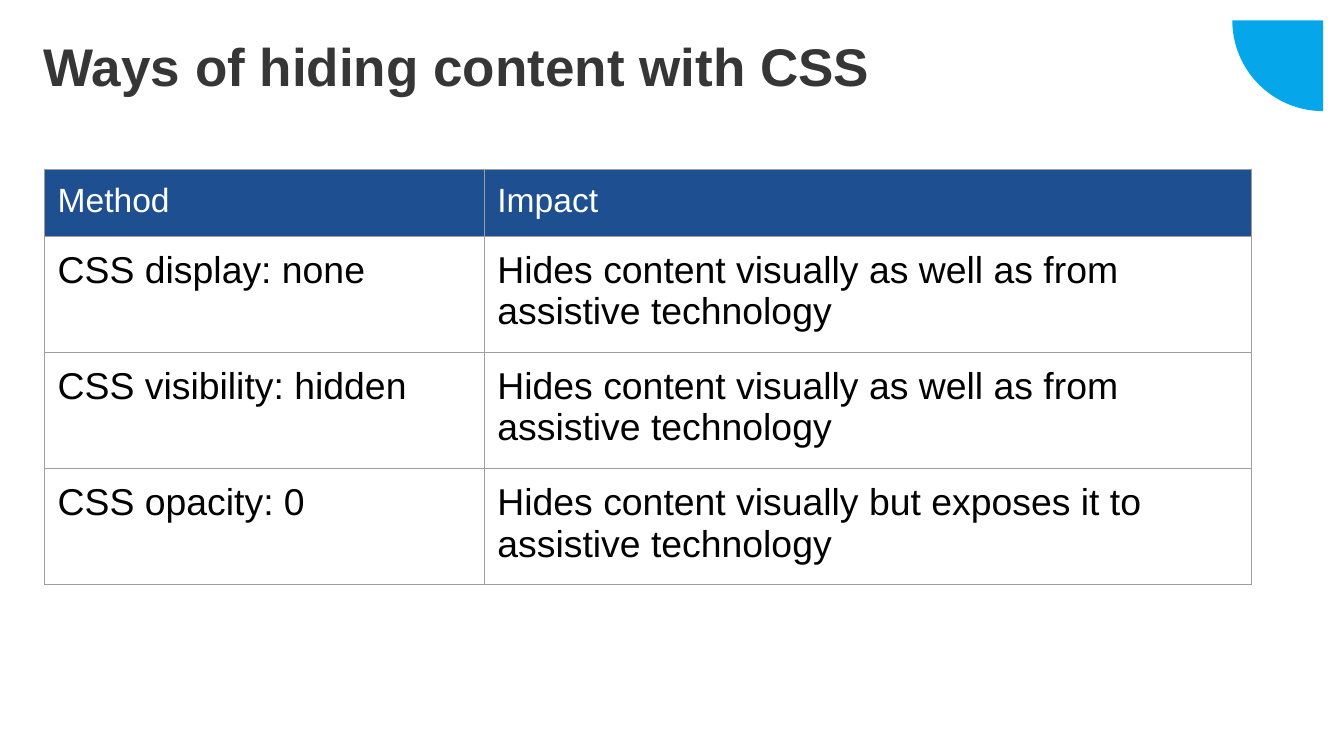
from lxml import etree
from pptx import Presentation
from pptx.dml.color import RGBColor
from pptx.enum.shapes import MSO_SHAPE
from pptx.enum.text import MSO_ANCHOR
from pptx.oxml.ns import qn
from pptx.util import Cm, Pt

PIE = MSO_SHAPE.PIE
MIDDLE = MSO_ANCHOR.MIDDLE
FONT = "Arial"
COLORS = {
    "accent": "06A6EA",
    "title": "373636",
    "header": "1D4F91",
    "header_text": "FFFFFF",
    "body_text": "000000",
    "border": "9E9E9E",
}
METHODS = [
    ("Method", "Impact"),
    ("CSS display: none", "Hides content visually as well as from assistive technology"),
    ("CSS visibility: hidden", "Hides content visually as well as from assistive technology"),
    ("CSS opacity: 0", "Hides content visually but exposes it to assistive technology"),
]


def rgb(name):
    """Return the named colour."""
    return RGBColor.from_string(COLORS[name])


def style_paragraph(paragraph, size, color, bold=False):
    """Set the font of a paragraph."""
    font = paragraph.font
    font.name, font.size, font.bold = FONT, Pt(size), bold
    font.color.rgb = rgb(color)


def add_corner(slide, left, top, size):
    """Add the quarter disc whose full circle fills the given square."""
    shape = slide.shapes.add_shape(PIE, left, top, size, size)
    shape.adjustments[0], shape.adjustments[1] = 108, 162
    shape.rotation = 270
    shape.shadow.inherit = False
    shape.fill.solid()
    shape.fill.fore_color.rgb = rgb("accent")
    shape.line.fill.background()


def add_title(slide, left, top, width, height):
    """Add the slide title in the given box."""
    frame = slide.shapes.add_textbox(left, top, width, height).text_frame
    frame.word_wrap = True
    frame.vertical_anchor = MIDDLE
    frame.margin_left = frame.margin_right = Cm(0.15)
    frame.margin_top = frame.margin_bottom = Cm(0.08)
    paragraph = frame.paragraphs[0]
    paragraph.text = "Ways of hiding content with CSS"
    paragraph.line_spacing = 0.9
    style_paragraph(paragraph, 28.4, "title", bold=True)


def add_borders(cell):
    """Draw a thin line on all four sides of a cell."""
    properties = cell._tc.get_or_add_tcPr()
    for index, side in enumerate(("a:lnL", "a:lnR", "a:lnT", "a:lnB")):
        line = etree.Element(qn(side), w=str(Pt(0.75)))
        fill = etree.SubElement(line, qn("a:solidFill"))
        etree.SubElement(fill, qn("a:srgbClr"), val=COLORS["border"])
        properties.insert(index, line)


def fill_cell(cell, text, is_header):
    """Write and style one table cell."""
    cell.margin_left = cell.margin_right = Cm(0.25)
    cell.margin_top = cell.margin_bottom = Cm(0.25)
    if is_header:
        cell.fill.solid()
        cell.fill.fore_color.rgb = rgb("header")
    else:
        cell.fill.background()
    add_borders(cell)
    paragraph = cell.text_frame.paragraphs[0]
    paragraph.text = text
    if is_header:
        style_paragraph(paragraph, 18, "header_text")
    else:
        style_paragraph(paragraph, 20, "body_text")


def add_methods_table(slide, left, top, width, height):
    """Add the table of hiding methods in the given box."""
    header_height = Cm(1.23)
    method_width = Cm(8.31)
    table = slide.shapes.add_table(len(METHODS), 2, left, top, width, height).table
    table.columns[0].width = method_width
    table.columns[1].width = width - method_width
    for row_index, texts in enumerate(METHODS):
        is_header = row_index == 0
        body_height = (height - header_height) // (len(METHODS) - 1)
        table.rows[row_index].height = header_height if is_header else body_height
        for column_index, text in enumerate(texts):
            fill_cell(table.cell(row_index, column_index), text, is_header)


def main():
    """Build and save the presentation."""
    presentation = Presentation()
    presentation.slide_width, presentation.slide_height = Cm(25.4), Cm(14.29)
    slide = presentation.slides.add_slide(presentation.slide_layouts[6])
    add_corner(slide, Cm(23.29), Cm(-1.33), Cm(3.43))
    add_title(slide, Cm(0.68), Cm(0.6), Cm(22.96), Cm(1.43))
    add_methods_table(slide, Cm(0.84), Cm(3.2), Cm(22.81), Cm(7.47))
    presentation.save("out.pptx")


if __name__ == "__main__":
    main()
